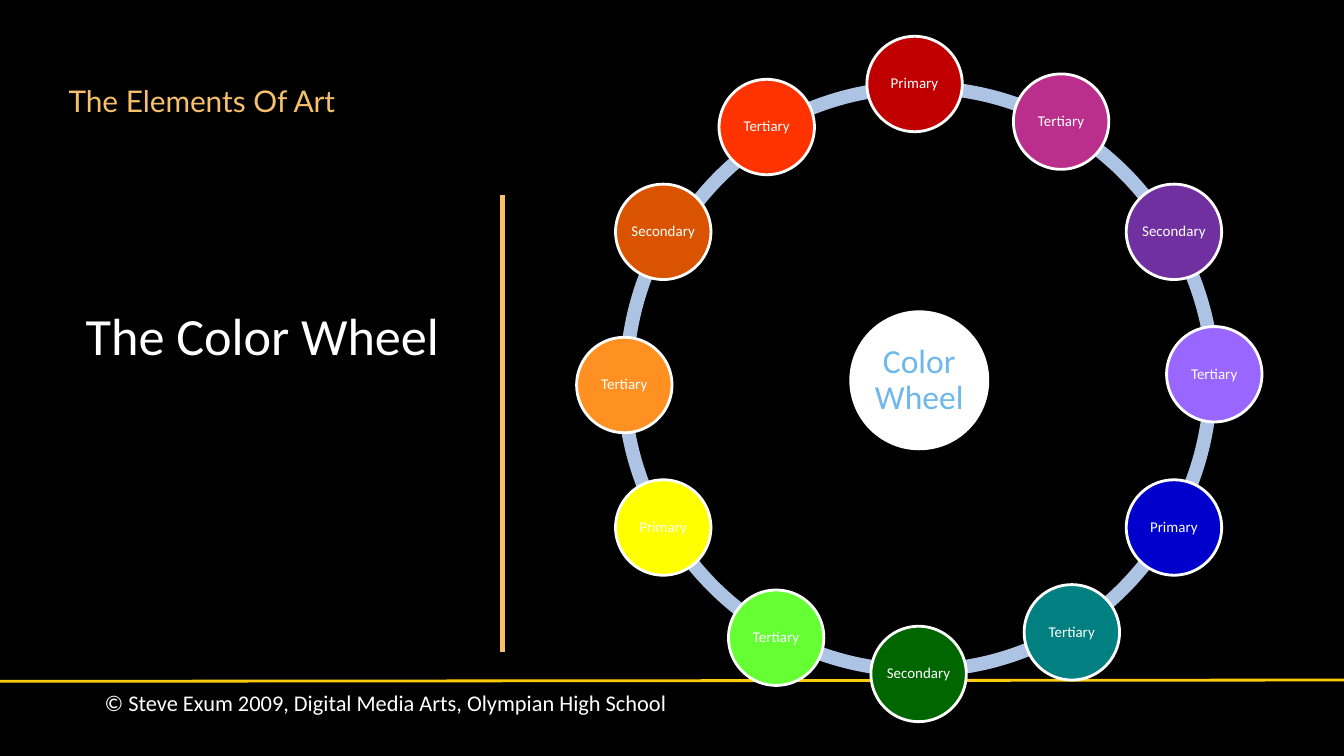
from lxml import etree
from pptx import Presentation
from pptx.dml.color import RGBColor
from pptx.enum.shapes import MSO_CONNECTOR, MSO_SHAPE
from pptx.enum.text import MSO_ANCHOR, MSO_AUTO_SIZE, PP_ALIGN
from pptx.oxml.ns import qn
from pptx.util import Inches, Pt

OVAL, ARC = MSO_SHAPE.OVAL, MSO_SHAPE.BLOCK_ARC
STRAIGHT = MSO_CONNECTOR.STRAIGHT
TOP, MIDDLE = MSO_ANCHOR.TOP, MSO_ANCHOR.MIDDLE
LEFT, CENTER = PP_ALIGN.LEFT, PP_ALIGN.CENTER
NO_FIT = MSO_AUTO_SIZE.NONE

WIDTH = 10
HEIGHT = WIDTH * 9 / 16

WHITE, BLACK, GOLD = "FFFFFF", "000000", "F6C16A"
YELLOW_LINE, RING, HUB_TEXT = "FFCB0A", "ACC3E3", "6EB8EA"

RING_SIZE, RING_THICKNESS, HUB_SIZE, SWATCH_SIZE = 4.44, 0.023, 1.02, 0.71

# Small shifts of each arc from the wheel's corner, counter-clockwise from the top.
ARC_SHIFTS = [
    (0.33, 0.33), (0.38, 0.36), (0.32, 0.34), (0.3, 0.34),
    (0.33, 0.34), (0.32, 0.33), (0.33, 0.33), (0.31, 0.36),
    (0.33, 0.33), (0.35, 0.37), (0.32, 0.33), (0.33, 0.33),
]

# Name, colour and place in the wheel, clockwise from the top.
SWATCHES = [
    ("Primary", "C00000", 2.16, 0), ("Tertiary", "BB2F8C", 3.25, 0.28),
    ("Secondary", "7030A0", 4.09, 1.1), ("Tertiary", "9966FF", 4.39, 2.16),
    ("Primary", "0000CC", 4.09, 3.3), ("Tertiary", "008080", 3.33, 4.08),
    ("Secondary", "006600", 2.19, 4.39), ("Tertiary", "66FF33", 1.13, 4.12),
    ("Primary", "FFFF00", 0.29, 3.3), ("Tertiary", "FF9021", 0, 2.24),
    ("Secondary", "D95301", 0.29, 1.1), ("Tertiary", "FF3300", 1.06, 0.32),
]


def rgb(color):
    return RGBColor.from_string(color)


def write(sp, text, size=12, color=WHITE, font="Calibri", align=LEFT, anchor=TOP,
          insets=(0.1, 0.05, 0.1, 0.05), wrap=True, spacing=None, indent=None):
    """Fill a shape with one paragraph; indent is (margin, first line) in inches."""
    tf = sp.text_frame
    tf.auto_size = NO_FIT
    tf.word_wrap = wrap
    tf.vertical_anchor = anchor
    (tf.margin_left, tf.margin_top,
     tf.margin_right, tf.margin_bottom) = map(Inches, insets)
    p = tf.paragraphs[0]
    p.alignment = align
    p.line_spacing = spacing
    if indent:
        pPr = p._p.get_or_add_pPr()
        pPr.set("marL", str(Inches(indent[0])))
        pPr.set("indent", str(Inches(indent[1])))
    r = p.add_run()
    r.text = text
    r.font.size = Pt(size)
    r.font.name = font
    r.font.color.rgb = rgb(color)


def add_filled(s, kind, x, y, size, fill, line=None):
    sp = s.shapes.add_shape(kind, *map(Inches, (x, y, size, size)))
    sp.shadow.inherit = False
    sp.fill.solid()
    sp.fill.fore_color.rgb = rgb(fill)
    if line:
        sp.line.color.rgb = rgb(line)
        sp.line.width = Pt(1.5)
    else:
        sp.line.fill.background()
    return sp


def add_line(s, x1, y1, x2, y2, color, width):
    line = s.shapes.add_connector(STRAIGHT, *map(Inches, (x1, y1, x2, y2)))
    line.line.color.rgb = rgb(color)
    line.line.width = Pt(width)
    etree.SubElement(line._element.spPr, qn("a:effectLst"))


def add_text(s, x, y, w, h, text, **fmt):
    write(s.shapes.add_textbox(*map(Inches, (x, y, w, h))), text, **fmt)


def add_footer(s, x, y, w):
    add_line(s, x, y + 0.01, x + w, y, YELLOW_LINE, 1.5)
    add_text(s, x + 0.68, y + 0.02, 7.05, 0.42,
             "© Steve Exum 2009, Digital Media Arts, Olympian High School")


def add_headings(s, x, y):
    title = s.shapes.title
    title.left, title.top, title.width, title.height = map(Inches, (x, y, 5.8, 0.56))
    write(title, "The Elements Of Art", size=16, color=GOLD, font="Lato",
          anchor=MIDDLE, insets=(0.1, 0.05, 0.1, 0.31))
    add_text(s, x, y + 1.61, 3.16, 1.32, "The Color Wheel", size=28,
             indent=(0.48, -0.35))
    add_line(s, x + 3.33, y + 0.85, x + 3.33, y + 4.25, GOLD, 3)


def add_color_wheel(s, x, y):
    step = 360 / len(ARC_SHIFTS)
    for i, (dx, dy) in enumerate(ARC_SHIFTS):
        start = (239.4 - i * step) % 360
        arc = add_filled(s, ARC, x + dx, y + dy, RING_SIZE, RING)
        # An adjustment of 1 is 100000 units, and a degree is 60000.
        arc.adjustments[0] = start * 0.6
        arc.adjustments[1] = (start + step) % 360 * 0.6
        arc.adjustments[2] = RING_THICKNESS

    hub = add_filled(s, OVAL, x + 2.04, y + 2.05, HUB_SIZE, WHITE, WHITE)
    write(hub, "Color Wheel", size=18, color=HUB_TEXT, align=CENTER, anchor=MIDDLE,
          insets=[0.03] * 4, spacing=0.9)
    for name, color, dx, dy in SWATCHES:
        swatch = add_filled(s, OVAL, x + dx, y + dy, SWATCH_SIZE, color, WHITE)
        write(swatch, name, size=8, align=CENTER, anchor=MIDDLE,
              insets=[0.01] * 4, wrap=False, spacing=0.9)


def main():
    prs = Presentation()
    prs.slide_width, prs.slide_height = Inches(WIDTH), Inches(HEIGHT)
    s = prs.slides.add_slide(prs.slide_layouts[5])
    s.background.fill.solid()
    s.background.fill.fore_color.rgb = rgb(BLACK)
    add_footer(s, 0, 5.06, WIDTH)
    add_headings(s, 0.41, 0.6)
    add_color_wheel(s, 4.29, 0.27)
    prs.save("out.pptx")


if __name__ == "__main__":
    main()
